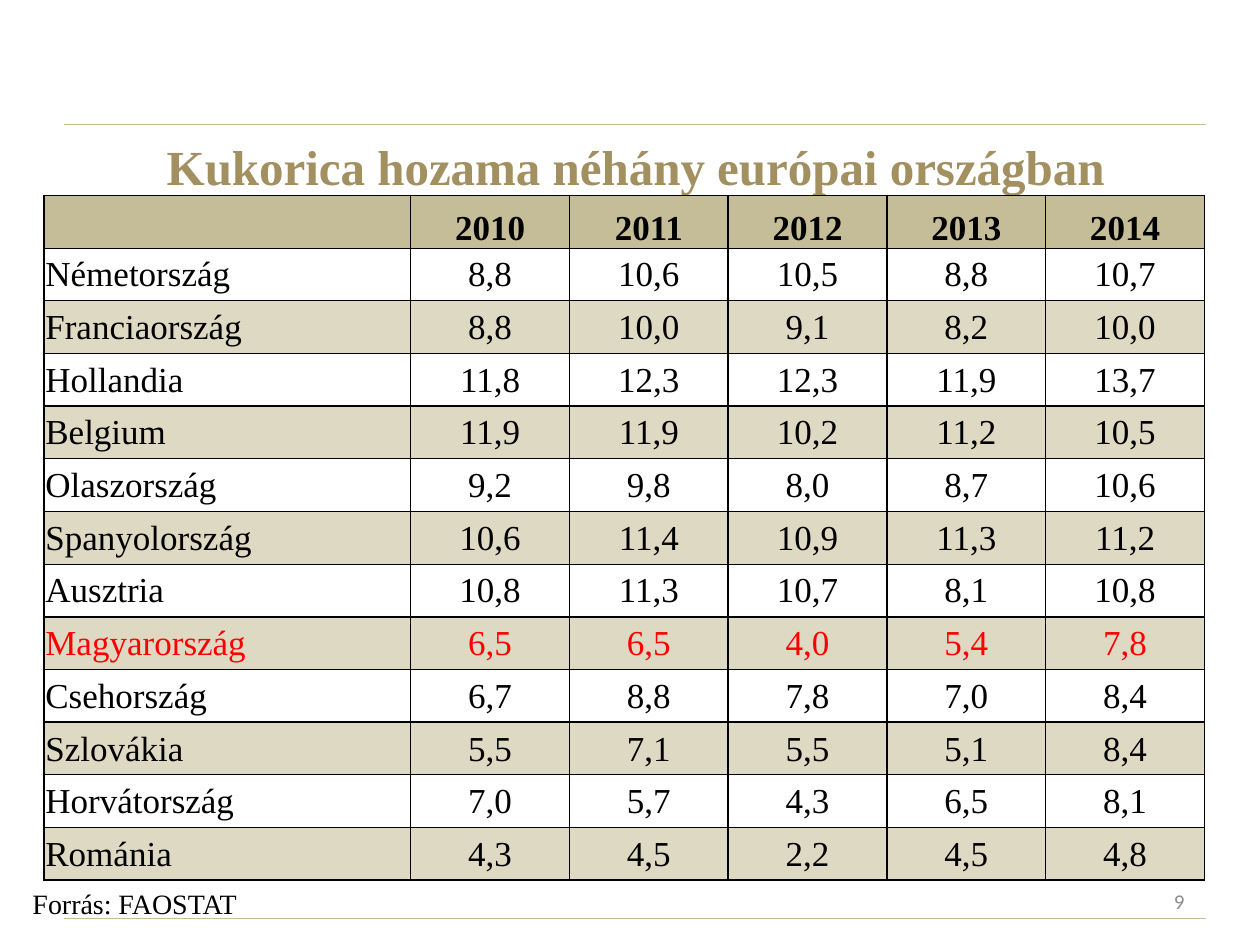
from lxml import etree
from pptx import Presentation
from pptx import util as u
from pptx.dml.color import RGBColor
from pptx.enum import shapes, text
from pptx.oxml import ns

SLIDE_WIDTH = u.Inches(10)
SLIDE_HEIGHT = u.Inches(7.5)
COUNTRY_WIDTH = 29.1
YEAR_WIDTH = 12.6
TABLE_HEIGHT = 72.53

BLACK = RGBColor(0x00, 0x00, 0x00)
RED = RGBColor(0xFF, 0x00, 0x00)
GREY = RGBColor(0x8C, 0x8C, 0x8C)
GOLD = RGBColor(0xA2, 0x90, 0x61)
TAN = RGBColor(0xC4, 0xBD, 0x97)
SAND = RGBColor(0xDD, 0xD9, 0xC3)

SERIF = "Times New Roman"
HIGHLIGHTED = "Magyarország"
YEARS = ["2010", "2011", "2012", "2013", "2014"]
YIELDS = {
    "Németország": ["8,8", "10,6", "10,5", "8,8", "10,7"],
    "Franciaország": ["8,8", "10,0", "9,1", "8,2", "10,0"],
    "Hollandia": ["11,8", "12,3", "12,3", "11,9", "13,7"],
    "Belgium": ["11,9", "11,9", "10,2", "11,2", "10,5"],
    "Olaszország": ["9,2", "9,8", "8,0", "8,7", "10,6"],
    "Spanyolország": ["10,6", "11,4", "10,9", "11,3", "11,2"],
    "Ausztria": ["10,8", "11,3", "10,7", "8,1", "10,8"],
    "Magyarország": ["6,5", "6,5", "4,0", "5,4", "7,8"],
    "Csehország": ["6,7", "8,8", "7,8", "7,0", "8,4"],
    "Szlovákia": ["5,5", "7,1", "5,5", "5,1", "8,4"],
    "Horvátország": ["7,0", "5,7", "4,3", "6,5", "8,1"],
    "Románia": ["4,3", "4,5", "2,2", "4,5", "4,8"],
}


def across(percent):
    return round(SLIDE_WIDTH * percent / 100)


def down(percent):
    return round(SLIDE_HEIGHT * percent / 100)


def area(left, top, width, height):
    return across(left), down(top), across(width), down(height)


def write(frame, words, size, color, align, font=SERIF, bold=False):
    frame.text = words
    paragraph = frame.paragraphs[0]
    paragraph.alignment = align
    for run in paragraph.runs:
        run.font.name = font
        run.font.size = u.Pt(size)
        run.font.bold = bold
        run.font.color.rgb = color


def add_rule(slide, top):
    rule = slide.shapes.add_connector(
        shapes.MSO_CONNECTOR.STRAIGHT, across(5.1), down(top), across(95.7), down(top))
    rule.line.color.rgb = TAN
    rule.line.width = u.Pt(0.75)
    etree.SubElement(rule.element.spPr, ns.qn("a:effectLst"))


def set_title(slide, words):
    title = slide.shapes.title
    title.left, title.top, title.width, title.height = area(2, 11.33, 96.9, 12.53)
    title.text_frame.vertical_anchor = text.MSO_ANCHOR.MIDDLE
    write(title.text_frame, words, 28, GOLD, text.PP_ALIGN.CENTER, bold=True)


def add_source(slide, words):
    frame = slide.shapes.add_textbox(*area(1.6, 93.2, 18.4, 4.93)).text_frame
    frame.word_wrap = False
    frame.auto_size = text.MSO_AUTO_SIZE.SHAPE_TO_FIT_TEXT
    write(frame, words, 16, BLACK, text.PP_ALIGN.LEFT)


def add_page_number(slide, number):
    frame = slide.shapes.add_textbox(*area(71.7, 92.67, 23.3, 5.33)).text_frame
    frame.word_wrap = True
    frame.vertical_anchor = text.MSO_ANCHOR.MIDDLE
    write(frame, number, 12, GREY, text.PP_ALIGN.RIGHT, font="Calibri")


def set_borders(cell, top, bottom):
    properties = cell._tc.get_or_add_tcPr()
    widths = {"a:lnL": 1, "a:lnR": 1, "a:lnT": top, "a:lnB": bottom}
    for position, (side, width) in enumerate(widths.items()):
        border = etree.Element(ns.qn(side), w=str(u.Pt(width)))
        fill = etree.SubElement(border, ns.qn("a:solidFill"))
        etree.SubElement(fill, ns.qn("a:srgbClr"), val=str(BLACK))
        properties.insert(position, border)


def paint(cell, color):
    if color is None:
        cell.fill.background()
    else:
        cell.fill.solid()
        cell.fill.fore_color.rgb = color


def fill_cell(cell, words, row, column):
    header = row == 0
    shaded = row % 2 == 0
    last = row == len(YIELDS)
    paint(cell, TAN if header else SAND if shaded else None)
    set_borders(cell, 1 if shaded else 0.5, 0.5 if shaded and not last else 1)
    cell.margin_left = cell.margin_top = cell.margin_right = u.Inches(0.01)
    cell.margin_bottom = 0
    cell.vertical_anchor = text.MSO_ANCHOR.BOTTOM if header else text.MSO_ANCHOR.MIDDLE
    align = text.PP_ALIGN.CENTER if column else text.PP_ALIGN.JUSTIFY
    color = RED if list(YIELDS)[row - 1] == HIGHLIGHTED and not header else BLACK
    if words:
        write(cell.text_frame, words, 20, color, align, bold=header)


def add_yield_table(slide):
    rows = [["", *YEARS]] + [[country, *values] for country, values in YIELDS.items()]
    width = COUNTRY_WIDTH + YEAR_WIDTH * len(YEARS)
    table = slide.shapes.add_table(
        len(rows), len(rows[0]), *area(3.5, 20.67, width, TABLE_HEIGHT)).table
    for index, column in enumerate(table.columns):
        column.width = across(YEAR_WIDTH if index else COUNTRY_WIDTH)
    for row, values in enumerate(rows):
        table.rows[row].height = down(TABLE_HEIGHT / len(rows))
        for column, words in enumerate(values):
            fill_cell(table.cell(row, column), words, row, column)


def main():
    deck = Presentation()
    deck.slide_width = SLIDE_WIDTH
    deck.slide_height = SLIDE_HEIGHT
    slide = deck.slides.add_slide(deck.slide_layouts[5])
    for top in (97.2, 13.2):
        add_rule(slide, top)
    set_title(slide, "Kukorica hozama néhány európai országban")
    add_source(slide, "Forrás: FAOSTAT")
    add_page_number(slide, "9")
    add_yield_table(slide)
    deck.save("out.pptx")


if __name__ == "__main__":
    main()
